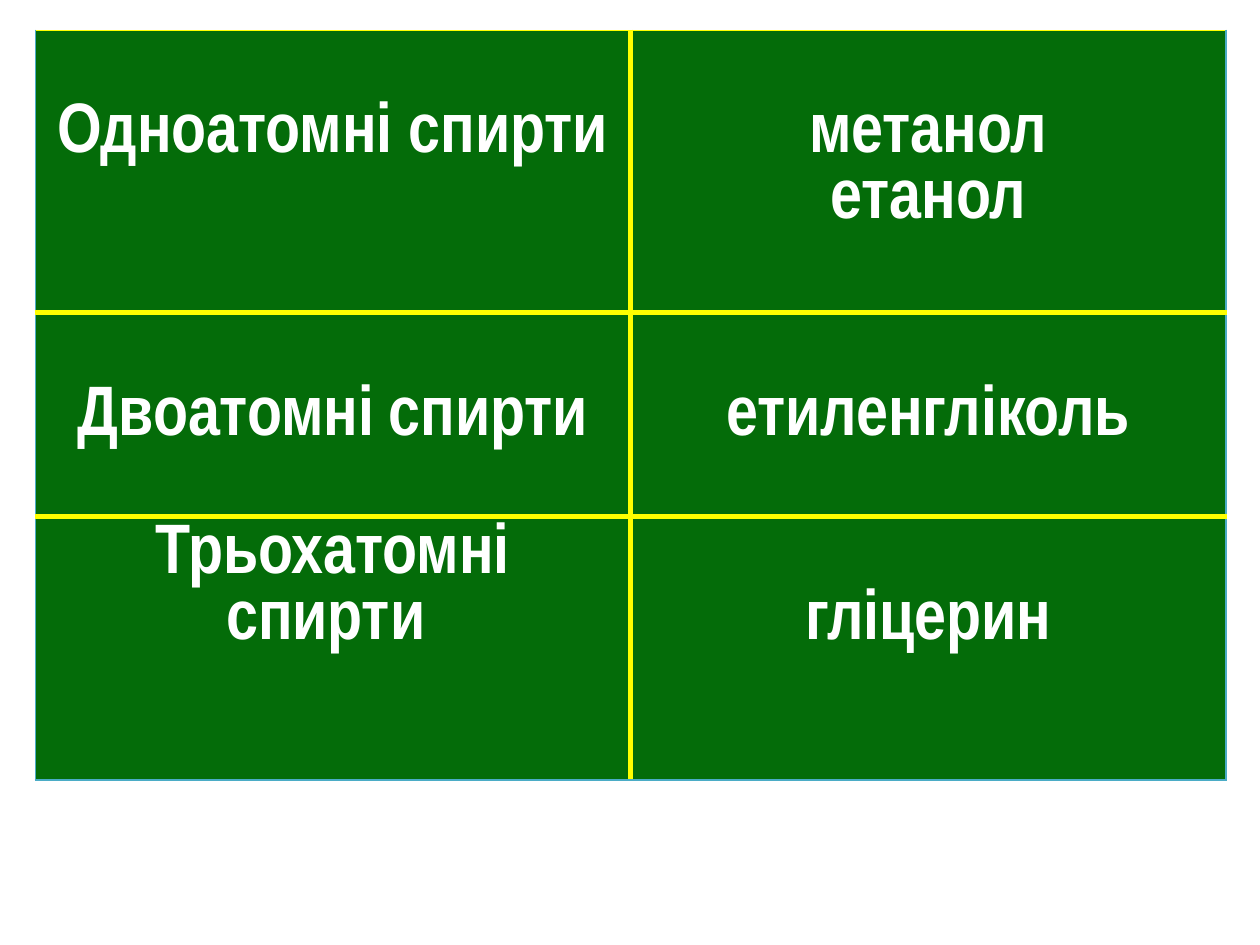
from lxml.etree import SubElement as Sub
from pptx import Presentation as Deck
from pptx.dml.color import RGBColor as Color
from pptx.enum.text import PP_ALIGN as Align
from pptx.oxml.ns import qn
from pptx.util import Inches, Pt

GREEN = Color(0x04, 0x6C, 0x09)
YELLOW = Color(0xFF, 0xFF, 0x00)
BLUE = Color(0x4B, 0xAC, 0xC6)
WHITE = Color(0xFF, 0xFF, 0xFF)
BLACK = Color(0x00, 0x00, 0x00)
FONT = "Arial Narrow"
GRID = (YELLOW, 3)
SIDE = (BLUE, 1)
TOP = (YELLOW, 1)

WIDTH = 4.725
ROWS = [2.24, 1.62, 2.09]
LOW = 0.57
HIGH = 0.05
GAP = (" ", 36, BLACK)


def word(text):
    return text, 40, WHITE


ALCOHOLS = [
    [(LOW, [[word("Одноатомні спирти")]]),
     (LOW, [[word("метанол"), None, word("етанол")]])],
    [(LOW, [[word("Двоатомні"), GAP, word("спирти")]]),
     (LOW, [[word("етиленгліколь")]])],
    [(HIGH, [[word("Трьохатомні")], [word("спирти"), GAP]]),
     (LOW, [[word("гліцерин")]])],
]


def add_run(para, part):
    if part is None:
        para.add_line_break()
        return
    text, size, color = part
    run = para.add_run()
    run.text = text
    font = run.font
    font.name = FONT
    font.size = Pt(size)
    font.bold = True
    font.color.rgb = color


def add_edge(cell, tag, edge):
    color, width = edge
    props = cell._tc.get_or_add_tcPr()
    line = Sub(props, qn(tag), w=str(Pt(width)))
    fill = Sub(line, qn("a:solidFill"))
    Sub(fill, qn("a:srgbClr"), val=str(color))


def fill_cell(cell, top, paras):
    cell.margin_top = Inches(top)
    cell.fill.solid()
    cell.fill.fore_color.rgb = GREEN
    frame = cell.text_frame
    for i, parts in enumerate(paras):
        para = frame.add_paragraph() if i else frame.paragraphs[0]
        para.alignment = Align.CENTER
        for part in parts:
            add_run(para, part)


def add_grid(slide):
    count = len(ROWS)
    frame = slide.shapes.add_table(
        count, 2, Inches(0.28), Inches(0.24),
        Inches(2 * WIDTH), Inches(sum(ROWS)))
    table = frame.table
    for col in table.columns:
        col.width = Inches(WIDTH)
    for r, height in enumerate(ROWS):
        table.rows[r].height = Inches(height)
        for c, (top, paras) in enumerate(ALCOHOLS[r]):
            cell = table.cell(r, c)
            add_edge(cell, "a:lnL", GRID if c else SIDE)
            add_edge(cell, "a:lnR", SIDE if c else GRID)
            add_edge(cell, "a:lnT", GRID if r else TOP)
            add_edge(cell, "a:lnB", GRID if r < count - 1 else SIDE)
            fill_cell(cell, top, paras)


def main():
    deck = Deck()
    deck.slide_width = Inches(10)
    deck.slide_height = Inches(7.5)
    slide = deck.slides.add_slide(deck.slide_layouts[6])
    add_grid(slide)
    deck.save("out.pptx")


if __name__ == "__main__":
    main()
